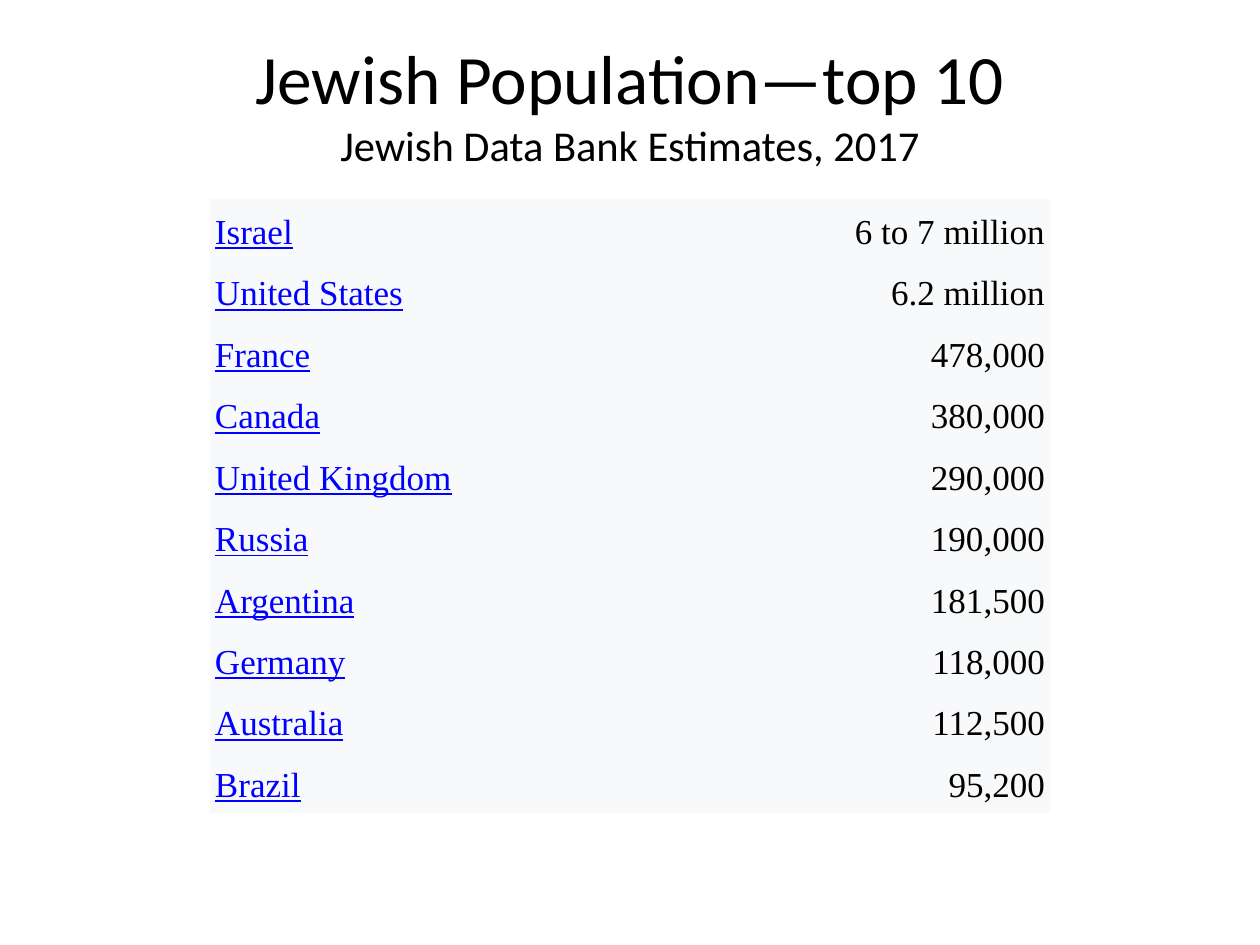
from dataclasses import dataclass
from typing import NamedTuple

import pptx
import pptx.dml.color
import pptx.enum.text
import pptx.oxml
import pptx.oxml.ns
import pptx.util

Inches = pptx.util.Inches
Pt = pptx.util.Pt
RGBColor = pptx.dml.color.RGBColor
Align = pptx.enum.text.PP_ALIGN
Anchor = pptx.enum.text.MSO_ANCHOR


@dataclass(frozen=True)
class Theme:
    title_font: str = "Calibri"
    table_font: str = "Times New Roman"
    title_size: float = 39.6
    subtitle_size: float = 24.3
    table_size: float = 20
    text: RGBColor = RGBColor(0x00, 0x00, 0x00)
    country: RGBColor = RGBColor(0x00, 0x00, 0xFF)
    cell_fill: RGBColor = RGBColor(0xF8, 0xF9, 0xFA)


class Population(NamedTuple):
    country: str
    estimate: str


THEME = Theme()
SLIDE_WIDTH, SLIDE_HEIGHT = Inches(10), Inches(7.5)
TABLE_WIDTH = SLIDE_WIDTH * 2 // 3
TABLE_HEIGHT = SLIDE_HEIGHT * 65 // 100
CELL_MARGIN = Inches(0.04)
TITLE = "Jewish Population—top 10"
SUBTITLE = "Jewish Data Bank Estimates, 2017"
POPULATIONS = [
    Population("Israel", "6 to 7 million"),
    Population("United States", "6.2 million"),
    Population("France", "478,000"),
    Population("Canada", "380,000"),
    Population("United Kingdom", "290,000"),
    Population("Russia", "190,000"),
    Population("Argentina", "181,500"),
    Population("Germany", "118,000"),
    Population("Australia", "112,500"),
    Population("Brazil", "95,200"),
]


def format_run(run, font_name: str, size: float, color: RGBColor) -> None:
    run.font.name = font_name
    run.font.size = Pt(size)
    run.font.color.rgb = color


def fill_title(title) -> None:
    title.left, title.width = SLIDE_WIDTH // 20, SLIDE_WIDTH * 9 // 10
    title.top, title.height = Inches(0.3), Inches(1.03)
    text_frame = title.text_frame
    text_frame.text = f"{TITLE}\v{SUBTITLE}"
    text_frame.word_wrap = True
    text_frame.auto_size = pptx.enum.text.MSO_AUTO_SIZE.NONE
    text_frame.vertical_anchor = Anchor.MIDDLE
    paragraph = text_frame.paragraphs[0]
    paragraph.alignment = Align.CENTER
    for run, size in zip(paragraph.runs, (THEME.title_size, THEME.subtitle_size)):
        format_run(run, THEME.title_font, size, THEME.text)


def hide_borders(cell) -> None:
    properties = cell._tc.get_or_add_tcPr()
    for side in ("lnL", "lnR", "lnT", "lnB"):
        properties.append(pptx.oxml.parse_xml(
            f'<a:{side} {pptx.oxml.ns.nsdecls("a")} w="0"><a:noFill/></a:{side}>'))


def fill_cell(cell, text: str, color: RGBColor, alignment: Align, underline: bool) -> None:
    hide_borders(cell)
    cell.fill.solid()
    cell.fill.fore_color.rgb = THEME.cell_fill
    cell.margin_left = cell.margin_right = CELL_MARGIN
    cell.margin_top = cell.margin_bottom = CELL_MARGIN
    cell.vertical_anchor = Anchor.MIDDLE
    cell.text_frame.text = text
    paragraph = cell.text_frame.paragraphs[0]
    paragraph.alignment = alignment
    paragraph.line_spacing = 1.15
    run = paragraph.runs[0]
    format_run(run, THEME.table_font, THEME.table_size, color)
    run.font.underline = underline


def add_population_table(slide) -> None:
    table = slide.shapes.add_table(
        len(POPULATIONS), 2, (SLIDE_WIDTH - TABLE_WIDTH) // 2, Inches(1.58),
        TABLE_WIDTH, TABLE_HEIGHT).table
    table.first_row = table.horz_banding = False
    for row, population in enumerate(POPULATIONS):
        fill_cell(table.cell(row, 0), population.country, THEME.country, Align.LEFT, True)
        fill_cell(table.cell(row, 1), population.estimate, THEME.text, Align.RIGHT, False)


def main() -> None:
    presentation = pptx.Presentation()
    presentation.slide_width, presentation.slide_height = SLIDE_WIDTH, SLIDE_HEIGHT
    title_only = presentation.slide_layouts.get_by_name("Title Only")
    slide = presentation.slides.add_slide(title_only)
    fill_title(slide.shapes.title)
    add_population_table(slide)
    presentation.save("out.pptx")


if __name__ == "__main__":
    main()
